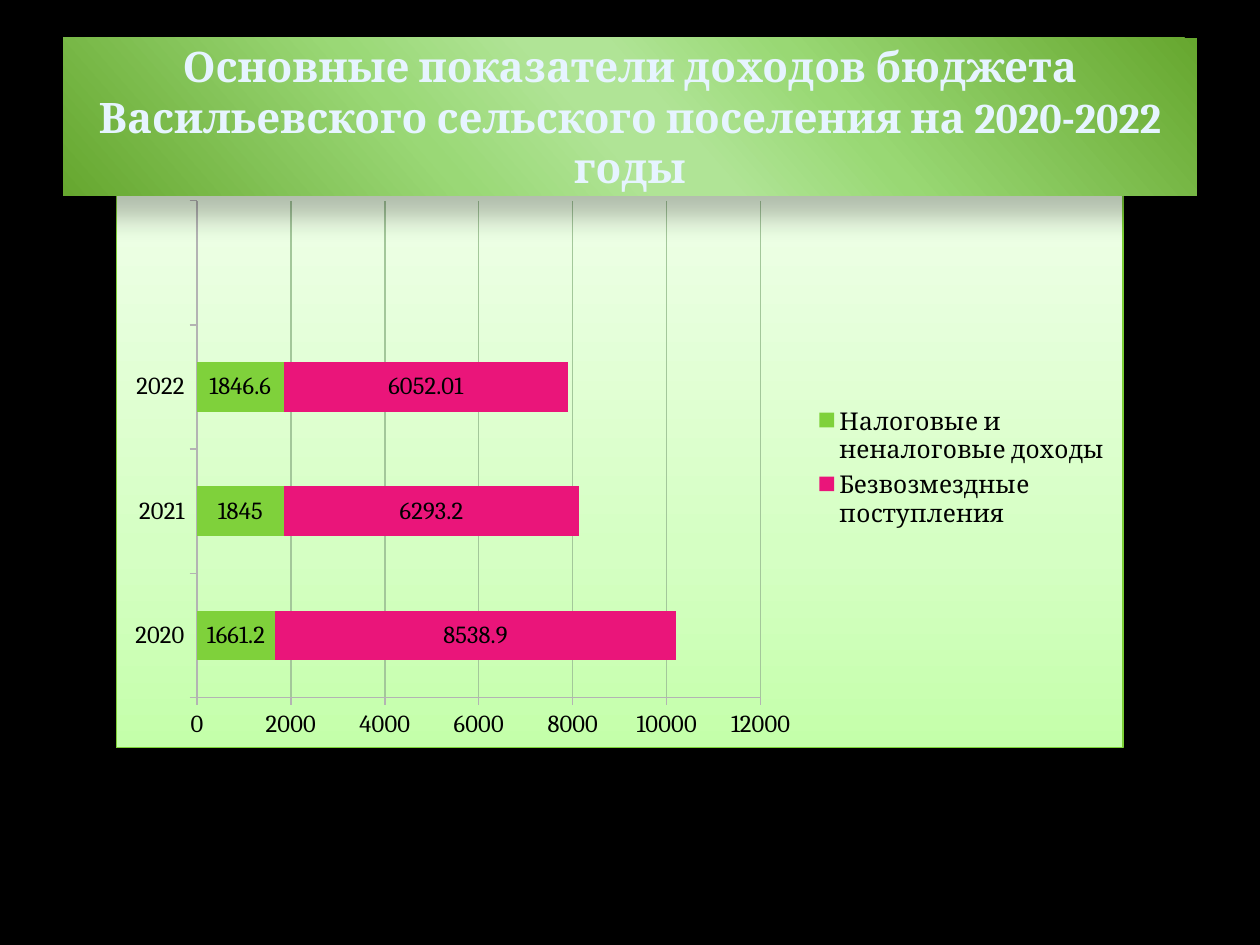
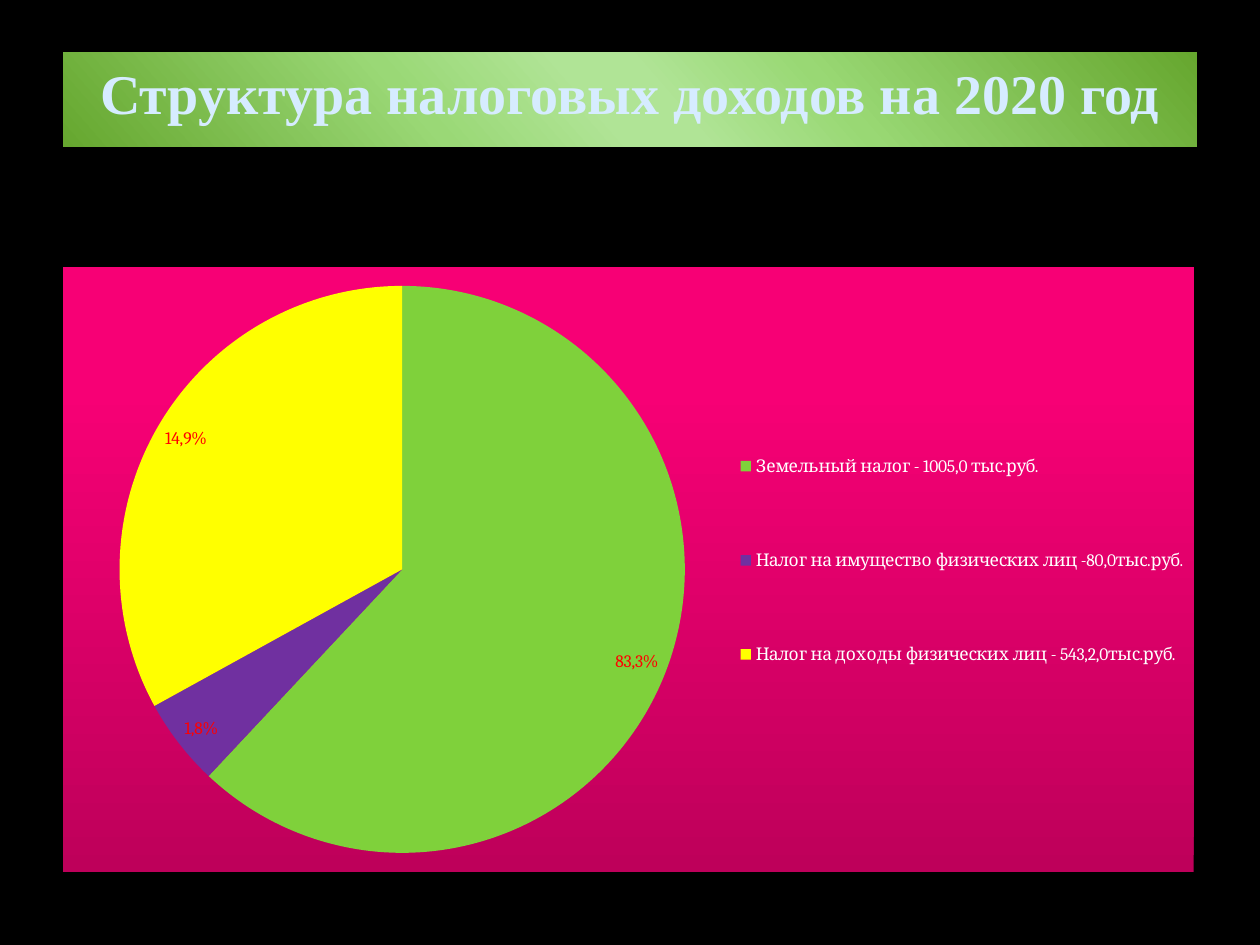
from dataclasses import dataclass
from typing import NamedTuple

from lxml.etree import SubElement, fromstring
from pptx import Presentation
from pptx.chart.chart import Chart
from pptx.chart.data import CategoryChartData
from pptx.dml.color import RGBColor
from pptx.enum.chart import XL_CHART_TYPE, XL_LABEL_POSITION, XL_LEGEND_POSITION, XL_TICK_MARK
from pptx.enum.text import MSO_ANCHOR, MSO_AUTO_SIZE, PP_ALIGN
from pptx.oxml.ns import qn
from pptx.slide import Slide
from pptx.util import Pt

DRAW = "http://schemas.openxmlformats.org/drawingml/2006/main"


class Box(NamedTuple):
    left: float
    top: float
    width: float
    height: float


class Blend(NamedTuple):
    stops: tuple[tuple[int, str], ...]
    angle: int


@dataclass(frozen=True)
class Theme:
    back: str = "000000"
    dark: str = "000000"
    light: str = "FFFFFF"
    green: str = "7FD13B"
    pink: str = "EA157A"
    purple: str = "7030A0"
    yellow: str = "FFFF00"
    red: str = "FF0000"
    axis: str = "B3B3B3"
    grid: str = "A3C79A"
    edge: str = "7CD036"
    serif: str = "Cambria"
    roman: str = "Times New Roman"
    bar_size: int = 14
    pie_size: int = 10
    band: Blend = Blend(((0, "66A72F"), (33, "99D874"), (47, "B0E496"),
                         (53, "B0E496"), (68, "9AD876"), (100, "66A72F")), 139)
    mint: Blend = Blend(((0, "C4FFAA"), (35, "D5FFC3"), (100, "EFFFE8")), 270)
    rose: Blend = Blend(((0, "BE005A"), (80, "F70075"), (100, "F80076")), 270)


@dataclass(frozen=True)
class Head:
    text: str
    box: Box
    font: str
    size: int
    color: str
    anchor: MSO_ANCHOR


@dataclass(frozen=True)
class Panel:
    kind: XL_CHART_TYPE
    box: Box
    plot: Box  # shares of the chart area
    key: Box  # shares of the chart area
    size: int
    color: str
    fill: Blend
    edge: str | None = None


class Slice(NamedTuple):
    name: str
    value: int
    label: str
    color: str


class Row(NamedTuple):
    name: str
    values: tuple[float | None, ...]
    color: str


THEME = Theme()

BAR_HEAD = Head("Основные показатели доходов бюджета Васильевского сельского поселения на 2020-2022 годы",
                Box(36, 21.6, 648, 90), THEME.serif, 24, "E6F4FF", MSO_ANCHOR.MIDDLE)
PIE_HEAD = Head("Структура налоговых доходов на 2020 год",
                Box(36, 30, 648, 54), THEME.roman, 32, "D6ECFF", MSO_ANCHOR.TOP)

BAR = Panel(XL_CHART_TYPE.BAR_STACKED, Box(66.2, 108, 576, 319.7),
            Box(0.08, 0.02, 0.56, 0.89), Box(0.69, 0.38, 0.3, 0.24),
            THEME.bar_size, THEME.dark, THEME.mint, THEME.edge)
PIE = Panel(XL_CHART_TYPE.PIE, Box(36, 152.6, 648, 345.6),
            Box(0.05, 0.03, 0.5, 0.94), Box(0.59, 0.19, 0.41, 0.59),
            THEME.pie_size, THEME.light, THEME.rose)

YEARS = ("2020", "2021", "2022", "")
ROWS = (
    Row("Налоговые и неналоговые доходы", (1661.2, 1845, 1846.6, None), THEME.green),
    Row("Безвозмездные поступления", (8538.9, 6293.2, 6052.01, None), THEME.pink),
)
SLICES = (
    Slice("Земельный налог - 1005,0 тыс.руб.", 62, "83,3%", THEME.green),
    Slice("Налог на имущество физических лиц -80,0тыс.руб.", 5, "1,8%", THEME.purple),
    Slice("Налог на доходы физических лиц - 543,2,0тыс.руб.", 33, "14,9%", THEME.yellow),
)


def rgb(code: str) -> RGBColor:
    return RGBColor.from_string(code)


def points(box: Box) -> list[Pt]:
    return [Pt(side) for side in box]


def blend_xml(blend: Blend) -> str:
    stops = "".join(f'<a:gs pos="{pos * 1000}"><a:srgbClr val="{code}"/></a:gs>'
                    for pos, code in blend.stops)
    return (f'<a:gradFill xmlns:a="{DRAW}" rotWithShape="1"><a:gsLst>{stops}</a:gsLst>'
            f'<a:lin ang="{blend.angle * 60000}" scaled="0"/></a:gradFill>')


def shade_xml() -> str:
    return (f'<a:effectLst xmlns:a="{DRAW}"><a:outerShdw blurRad="{Pt(15)}" dist="{Pt(18)}" '
            'dir="2700000" sy="90000" rotWithShape="0"><a:srgbClr val="000000">'
            '<a:alpha val="25500"/></a:srgbClr></a:outerShdw></a:effectLst>')


# Title band
def draw_head(slide: Slide, head: Head) -> None:
    title = slide.shapes.title
    title.left, title.top, title.width, title.height = points(head.box)
    for xml in (blend_xml(THEME.band), shade_xml()):
        title.element.spPr.append(fromstring(xml))
    frame = title.text_frame
    frame.text = head.text
    frame.word_wrap = True
    frame.auto_size = MSO_AUTO_SIZE.NONE
    frame.vertical_anchor = head.anchor
    line = frame.paragraphs[0]
    line.alignment = PP_ALIGN.CENTER
    font = line.runs[0].font
    font.name, font.size, font.bold = head.font, Pt(head.size), True
    font.color.rgb = rgb(head.color)
    # The band lies over the chart
    title.element.getparent().append(title.element)


# Chart frame, fill and legend
def place(node, index: int, box: Box) -> None:
    for old in node.findall(qn("c:layout")):
        node.remove(old)
    layout = SubElement(node, qn("c:layout"))
    node.insert(index, layout)
    manual = SubElement(layout, qn("c:manualLayout"))
    if node.tag == qn("c:plotArea"):
        SubElement(manual, qn("c:layoutTarget")).set("val", "inner")
    for name in ("xMode", "yMode"):
        SubElement(manual, qn(f"c:{name}")).set("val", "edge")
    for name, share in zip("xywh", box):
        SubElement(manual, qn(f"c:{name}")).set("val", str(share))


def draw_chart(slide: Slide, panel: Panel, data: CategoryChartData) -> Chart:
    chart = slide.shapes.add_chart(panel.kind, *points(panel.box), data).chart
    chart.has_title = False
    font = chart.font
    font.name, font.size = THEME.serif, Pt(panel.size)
    font.color.rgb = rgb(panel.color)
    chart.has_legend = True
    chart.legend.position = XL_LEGEND_POSITION.RIGHT
    chart.legend.include_in_layout = False
    body = chart.element.find(qn("c:chart"))
    place(body.find(qn("c:plotArea")), 0, panel.plot)
    place(body.find(qn("c:legend")), 1, panel.key)
    area = SubElement(chart.element, qn("c:spPr"))
    body.addnext(area)
    area.append(fromstring(blend_xml(panel.fill)))
    line = SubElement(area, qn("a:ln"))
    if panel.edge:
        line.set("w", str(Pt(0.75)))
        paint = SubElement(line, qn("a:solidFill"))
        SubElement(paint, qn("a:srgbClr")).set("val", panel.edge)
    else:
        SubElement(line, qn("a:noFill"))
    return chart


# Income by year
def draw_bars(slide: Slide) -> None:
    data = CategoryChartData()
    data.categories = YEARS
    for row in ROWS:
        data.add_series(row.name, row.values)
    chart = draw_chart(slide, BAR, data)
    plot = chart.plots[0]
    plot.gap_width, plot.overlap = 150, 98
    for series, row in zip(plot.series, ROWS):
        series.format.fill.solid()
        series.format.fill.fore_color.rgb = rgb(row.color)
        series.data_labels.show_value = True
    for axis in (chart.category_axis, chart.value_axis):
        axis.major_tick_mark = XL_TICK_MARK.OUTSIDE
        axis.minor_tick_mark = XL_TICK_MARK.NONE
        axis.format.line.color.rgb = rgb(THEME.axis)
    scale = chart.value_axis
    scale.minimum_scale, scale.maximum_scale, scale.major_unit = 0, 12000, 2000
    scale.has_major_gridlines = True
    grid = scale.major_gridlines.format.line
    grid.color.rgb, grid.width = rgb(THEME.grid), Pt(0.75)


# Shares of tax
def draw_pie(slide: Slide) -> None:
    data = CategoryChartData()
    data.categories = [part.name for part in SLICES]
    data.add_series("Series 1", [part.value for part in SLICES])
    plot = draw_chart(slide, PIE, data).plots[0]
    plot.vary_by_categories = True
    for index, part in enumerate(SLICES):
        point = plot.series[0].points[index]
        point.format.fill.solid()
        point.format.fill.fore_color.rgb = rgb(part.color)
        label = point.data_label
        label.text_frame.text = part.label
        font = label.text_frame.paragraphs[0].runs[0].font
        font.name, font.size = THEME.serif, Pt(THEME.pie_size)
        font.color.rgb = rgb(THEME.red)
        label.position = XL_LABEL_POSITION.INSIDE_END


def main() -> None:
    deck = Presentation()
    deck.slide_width, deck.slide_height = Pt(720), Pt(540)
    fill = deck.slide_master.background.fill
    fill.solid()
    fill.fore_color.rgb = rgb(THEME.back)
    for draw, head in ((draw_bars, BAR_HEAD), (draw_pie, PIE_HEAD)):
        slide = deck.slides.add_slide(deck.slide_layouts[5])
        draw(slide)
        draw_head(slide, head)
    deck.save("out.pptx")


if __name__ == "__main__":
    main()
